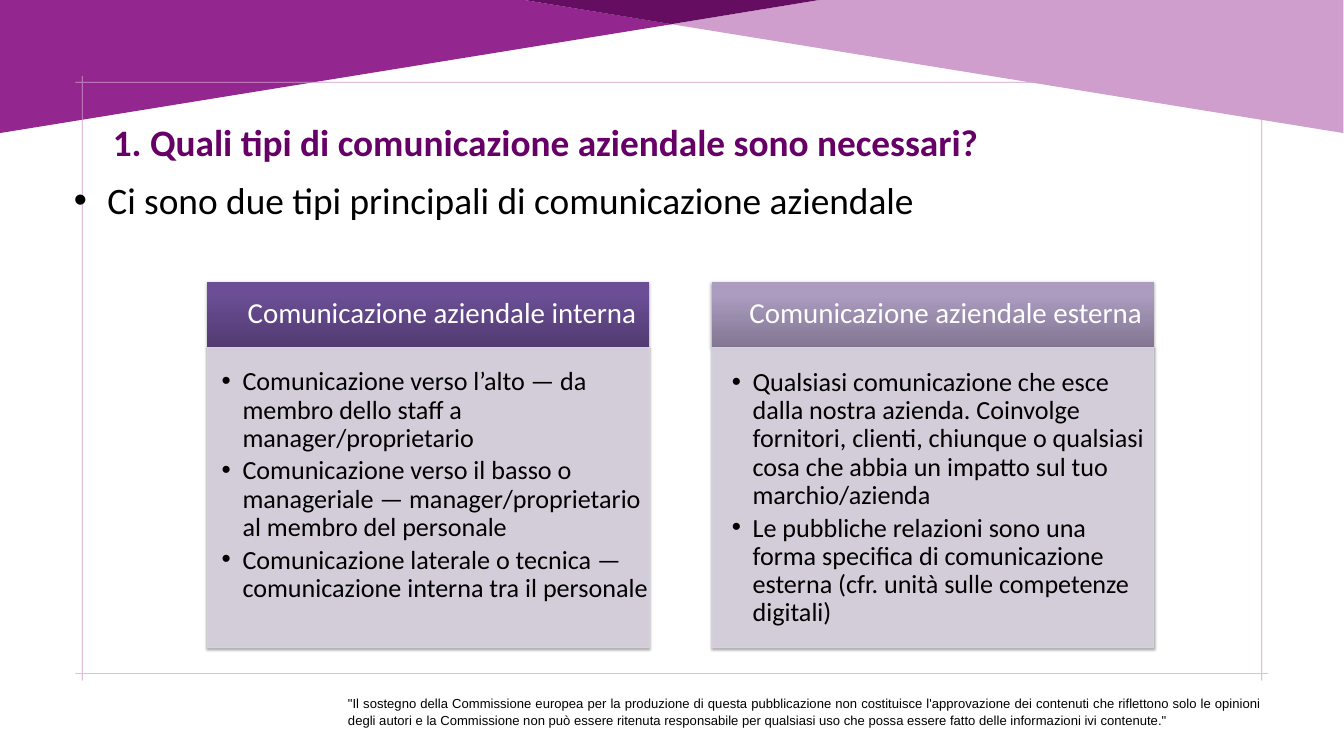
from lxml import etree
from pptx import Presentation
from pptx.dml.color import RGBColor
from pptx.enum.shapes import MSO_SHAPE as SHAPE
from pptx.enum.text import MSO_ANCHOR as ANCHOR, MSO_AUTO_SIZE as AUTO, PP_ALIGN as ALIGN
from pptx.oxml import parse_xml
from pptx.oxml.ns import nsdecls, qn
from pptx.util import Inches, Pt

COLORS = {
    "purple": "93268F", "lilac": "CF9ECC", "plum": "640D61", "title": "660066",
    "black": "000000", "white": "FFFFFF", "card": "D7D1DF",
}

# Content
TITLE = "1. Quali tipi di comunicazione aziendale sono necessari?"
INTRO = "Ci sono due tipi principali di comunicazione aziendale"
DISCLAIMER = (
    "\"Il sostegno della Commissione europea per la produzione di questa pubblicazione non "
    "costituisce l'approvazione dei contenuti che riflettono solo le opinioni degli autori e la "
    "Commissione non può essere ritenuta responsabile per qualsiasi uso che possa essere fatto "
    "delle informazioni ivi contenute.\""
)
CARDS = [
    {
        "left": 3.08,
        "head": "Comunicazione aziendale interna",
        "head_box": (3.26, 4.19, 6.63, 0.98),
        "stops": [(0, "513B71"), (80, "6B4E95"), (100, "6B4D96")],
        "items": [
            "Comunicazione verso l’alto — da membro dello staff a manager/proprietario",
            "Comunicazione verso il basso o manageriale — manager/proprietario al membro del "
            "personale",
            "Comunicazione laterale o tecnica — comunicazione interna tra il personale",
        ],
        "items_box": (3.12, 5.3, 6.77, 4.92),
    },
    {
        "left": 10.59,
        "head": "Comunicazione aziendale esterna",
        "head_box": (10.59, 4.19, 6.96, 0.98),
        "stops": [(0, "827692"), (80, "AB9CC0"), (100, "AC9DC1")],
        "items": [
            "Qualsiasi comunicazione che esce dalla nostra azienda. Coinvolge fornitori, clienti, "
            "chiunque o qualsiasi cosa che abbia un impatto sul tuo marchio/azienda",
            "Le pubbliche relazioni sono una forma specifica di comunicazione esterna (cfr. unità "
            "sulle competenze digitali)",
        ],
        "items_box": (10.71, 5.31, 6.72, 4.47),
    },
]

# Geometry in inches
CARD_W, HEAD_TOP, HEAD_H, BODY_H = 6.58, 4.19, 0.98, 4.47
LEFT_BAND = [(0, 1.98), (0, 0), (7.8, 0), (10, 0.36)]
RIGHT_BAND = [(19.99, 1.98), (9.99, 0.36), (12.19, 0), (19.99, 0)]
OVERLAP = [(9.99, 0.36), (7.8, 0), (12.19, 0)]
FRAME_X, FRAME_Y = (1.12, 1.22, 18.77, 18.87), (1.13, 1.22, 10.02, 10.13)
RULE = 0.01


def rgb(name):
    return RGBColor.from_string(COLORS[name])


def bar(x, y, w, h):
    return [(x, y), (x + w, y), (x + w, y + h), (x, y + h)]


def add_outline(contours, color):
    """One filled freeform made of closed contours."""
    contours = [[(Inches(x), Inches(y)) for x, y in c] for c in contours]
    fb = slide.shapes.build_freeform(*contours[0][0])
    for i, points in enumerate(contours):
        if i:
            fb.move_to(*points[0])
        fb.add_line_segments(points[1:], close=True)
    s = fb.convert_to_shape()
    s.shadow.inherit = False
    s.fill.solid()
    s.fill.fore_color.rgb = rgb(color)
    s.line.fill.background()


def add_panel(x, y, h):
    """Rectangle with a soft shadow below it."""
    s = slide.shapes.add_shape(SHAPE.RECTANGLE, Inches(x), Inches(y), Inches(CARD_W), Inches(h))
    s.shadow.inherit = False
    effects = s._element.spPr.find(qn("a:effectLst"))
    effects.append(parse_xml(
        f'<a:outerShdw {nsdecls("a")} blurRad="{Pt(3.1)}" dist="{Pt(1.8)}" dir="5400000" '
        f'rotWithShape="0"><a:srgbClr val="{COLORS["black"]}"><a:alpha val="35000"/></a:srgbClr>'
        '</a:outerShdw>'))
    return s


def set_alpha(fill, percent):
    clr = fill._xPr.find(qn("a:solidFill"))[0]
    etree.SubElement(clr, qn("a:alpha")).set("val", str(percent * 1000))


def add_text(box, *lines, size, color="black", font="Calibri", bold=False, align=None,
             anchor=ANCHOR.TOP, insets=(0.1, 0.05, 0.1, 0.05), spacing=None, before=0,
             indent=None, grow=False):
    tf = slide.shapes.add_textbox(*map(Inches, box)).text_frame
    tf.word_wrap = True
    tf.vertical_anchor = anchor
    tf.auto_size = AUTO.SHAPE_TO_FIT_TEXT if grow else AUTO.NONE
    tf.margin_left, tf.margin_top, tf.margin_right, tf.margin_bottom = map(Inches, insets)
    for i, line in enumerate(lines):
        p = tf.add_paragraph() if i else tf.paragraphs[0]
        p.alignment = align
        if spacing:
            p.line_spacing = spacing
        if i:
            p.space_before = Pt(before)
        if indent:
            pPr = p._p.get_or_add_pPr()
            pPr.set("marL", str(Inches(indent)))
            pPr.set("indent", str(-Inches(indent)))
            etree.SubElement(pPr, qn("a:buFont")).set("typeface", "Arial")
            etree.SubElement(pPr, qn("a:buChar")).set("char", "•")
        r = p.add_run()
        r.text = line
        r.font.size, r.font.name, r.font.bold = Pt(size), font, bold
        r.font.color.rgb = rgb(color)


prs = Presentation()
prs.slide_width, prs.slide_height = Inches(20), Inches(11.25)
slide = prs.slides.add_slide(prs.slide_layouts[6])

# Top bands and the thin frame with crossing corners
add_outline([LEFT_BAND], "purple")
x0, x1, x2, x3 = FRAME_X
y0, y1, y2, y3 = FRAME_Y
add_outline([bar(x0, y, x3 - x0, RULE) for y in (y1, y2)]
            + [bar(x, y0, RULE, y3 - y0) for x in (x1, x2)], "lilac")
add_outline([RIGHT_BAND], "lilac")
add_outline([OVERLAP], "plum")

# Disclaimer, title and introduction
add_text((5.08, 10.29, 13.79, 0.52), DISCLAIMER, size=14, font="Arial", align=ALIGN.JUSTIFY,
         spacing=1.07, grow=True)
add_text((1.58, 1.72, 13.25, 0.77), TITLE, size=40, color="title", bold=True, grow=True)
add_text((1, 2.59, 14.42, 0.77), INTRO, size=40, indent=0.5, grow=True)

# Two cards: gradient header above a list
for card in CARDS:
    head = add_panel(card["left"], HEAD_TOP, HEAD_H)
    head.line.fill.background()
    head.fill.gradient()
    head.fill.gradient_angle = 90
    gs_list = head._element.spPr.find(qn("a:gradFill")).find(qn("a:gsLst"))
    gs_list[:] = [
        parse_xml(f'<a:gs {nsdecls("a")} pos="{pos * 1000}"><a:srgbClr val="{c}"/></a:gs>')
        for pos, c in card["stops"]
    ]
    add_text(card["head_box"], card["head"], size=31, color="white", align=ALIGN.CENTER,
             anchor=ANCHOR.MIDDLE, insets=(0.24, 0.14, 0.24, 0.14), spacing=0.9)

    body = add_panel(card["left"], HEAD_TOP + HEAD_H, BODY_H)
    body.line.width = Pt(0.75)
    for fill in (body.fill, body.line.fill):
        fill.solid()
        fill.fore_color.rgb = rgb("card")
    set_alpha(body.fill._fill, 90) if hasattr(body.fill._fill, "_xPr") else set_alpha(body.fill, 90)
    add_text(card["items_box"], *card["items"], size=28, insets=(0.18, 0.18, 0.24, 0.27),
             spacing=0.9, before=4.7, indent=0.31)

prs.save("out.pptx")
